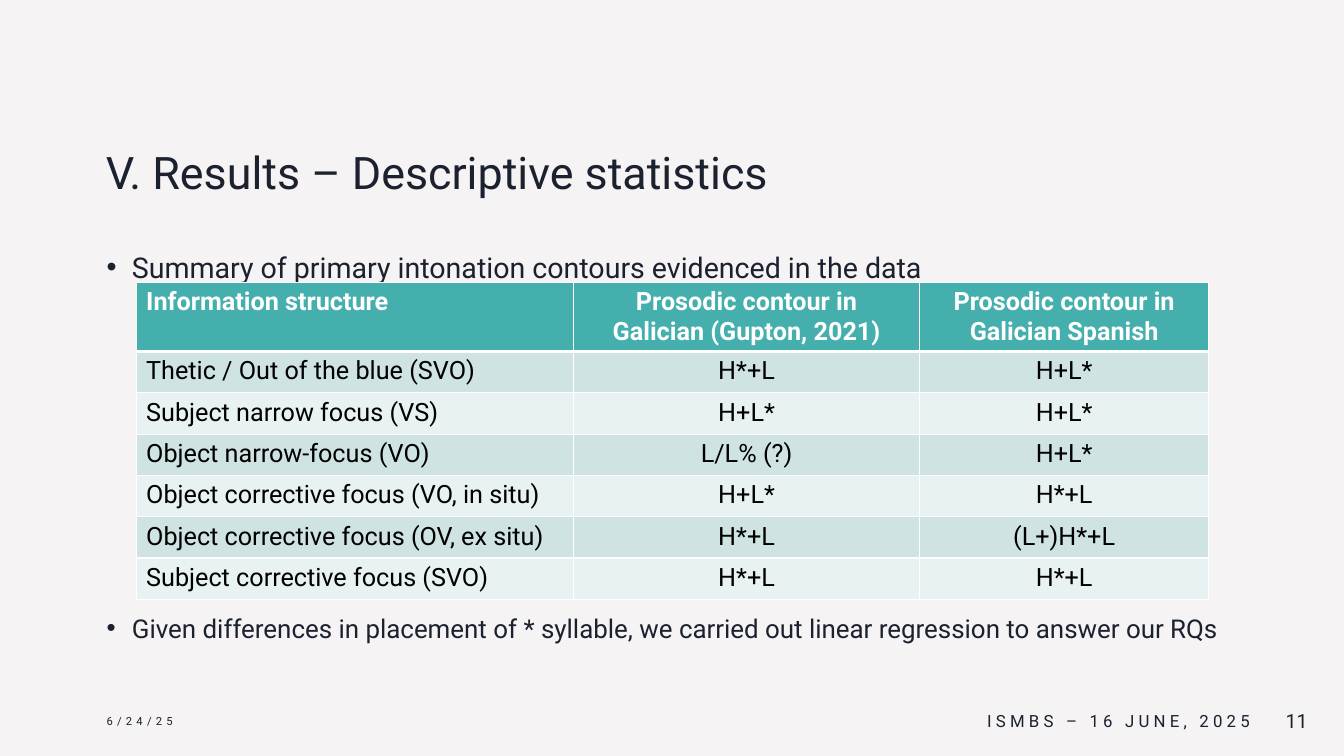
from lxml.etree import SubElement
from pptx import Presentation
from pptx.dml.color import RGBColor
from pptx.enum.text import MSO_ANCHOR, MSO_AUTO_SIZE, PP_ALIGN
from pptx.oxml.ns import qn
from pptx.util import Inches, Pt

INK = "1B212F"
WHITE = "FFFFFF"
BACKGROUND = "F5F3F3"
TEAL = "45AFAE"
BANDS = ("CFE3E3", "E9F2F2")

CONTOURS = [
    ("Information structure", "Prosodic contour in\nGalician (Gupton, 2021)",
     "Prosodic contour in Galician Spanish"),
    ("Thetic / Out of the blue (SVO)", "H*+L", "H+L*"),
    ("Subject narrow focus (VS)", "H+L*", "H+L*"),
    ("Object narrow-focus (VO)", "L/L% (?)", "H+L*"),
    ("Object corrective focus (VO, in situ)", "H+L*", "H*+L"),
    ("Object corrective focus (OV, ex situ)", "H*+L", "(L+)H*+L"),
    ("Subject corrective focus (SVO)", "H*+L", "H*+L"),
]


def color(hex_string):
    return RGBColor.from_string(hex_string)


def write(paragraph, text, size=18, ink=INK, bold=False, align=PP_ALIGN.LEFT, tracking=0):
    paragraph.alignment = align
    run = paragraph.add_run()
    run.text = text
    run.font.name = "Roboto"
    run.font.size = Pt(size)
    run.font.bold = bold
    run.font.color.rgb = color(ink)
    if tracking:
        run.font._element.set("spc", str(tracking * 100))


class ResultsSlide:
    def __init__(self, presentation):
        self.slide = presentation.slides.add_slide(presentation.slide_layouts[5])
        fill = self.slide.background.fill
        fill.solid()
        fill.fore_color.rgb = color(BACKGROUND)

    def frame(self, holder, anchor):
        frame = holder.text_frame
        frame.word_wrap = True
        frame.auto_size = MSO_AUTO_SIZE.NONE
        frame.vertical_anchor = anchor
        return frame

    def title(self, text, left, top, width, height):
        heading = self.slide.shapes.title
        heading.left, heading.top = Inches(left), Inches(top)
        heading.width, heading.height = Inches(width), Inches(height)
        frame = self.frame(heading, MSO_ANCHOR.BOTTOM)
        write(frame.paragraphs[0], text, size=32)

    def text(self, left, top, width, height, anchor=MSO_ANCHOR.MIDDLE):
        box = self.slide.shapes.add_textbox(
            Inches(left), Inches(top), Inches(width), Inches(height))
        return self.frame(box, anchor)

    def label(self, text, left, width, **style):
        write(self.text(left, 6.95, width, 0.4).paragraphs[0], text, **style)

    def bullets(self, items, left, top, width, height):
        frame = self.text(left, top, width, height, MSO_ANCHOR.TOP)
        for index, (text, size, gap) in enumerate(items):
            paragraph = frame.add_paragraph() if index else frame.paragraphs[0]
            paragraph.line_spacing = 1.2
            paragraph.space_before = Pt(gap)
            properties = paragraph._p.get_or_add_pPr()
            properties.set("marL", str(Inches(0.25)))
            properties.set("indent", str(Inches(-0.25)))
            SubElement(properties, qn("a:buFont"), typeface="Arial")
            SubElement(properties, qn("a:buChar"), char="•")
            write(paragraph, text, size=size)

    def table(self, rows, left, top, widths, heights):
        grid = self.slide.shapes.add_table(
            len(rows), len(widths), Inches(left), Inches(top),
            Inches(sum(widths)), Inches(sum(heights))).table
        for column, width in zip(grid.columns, widths):
            column.width = Inches(width)
        for index, (row, height, texts) in enumerate(zip(grid.rows, heights, rows)):
            row.height = Inches(height)
            for position, (cell, text) in enumerate(zip(row.cells, texts)):
                self.cell(cell, text, index, position)

    def cell(self, cell, text, row, column):
        header = row == 0
        for index, line in enumerate(text.split("\n")):
            frame = cell.text_frame
            paragraph = frame.add_paragraph() if index else frame.paragraphs[0]
            write(paragraph, line, ink=WHITE if header else "000000", bold=header,
                  align=PP_ALIGN.CENTER if column else PP_ALIGN.LEFT)
        properties = cell._tc.get_or_add_tcPr()
        weights = {"lnL": 1, "lnR": 1, "lnT": 3 if row == 1 else 1, "lnB": 3 if header else 1}
        for side, weight in weights.items():
            border = SubElement(properties, qn(f"a:{side}"), w=str(Pt(weight)))
            SubElement(SubElement(border, qn("a:solidFill")), qn("a:srgbClr"), val=WHITE)
        cell.fill.solid()
        cell.fill.fore_color.rgb = color(TEAL if header else BANDS[(row - 1) % 2])


def main():
    presentation = Presentation()
    presentation.slide_width, presentation.slide_height = Inches(13.33), Inches(7.5)
    results = ResultsSlide(presentation)
    results.title("V. Results – Descriptive statistics", 0.95, 0.64, 11.43, 1.38)
    results.bullets([
        ("Summary of primary intonation contours evidenced in the data", 20.4, 10),
        ("Given differences in placement of * syllable, we carried out linear "
         "regression to answer our RQs", 18.5, 230),
    ], 0.96, 2.36, 11.42, 4.27)
    results.label("6/24/25", 0.96, 3, size=8, tracking=3)
    results.label("ISMBS – 16 JUNE, 2025", 7.8, 4.7, size=12, tracking=3, align=PP_ALIGN.RIGHT)
    results.label("11", 12.5, 0.57, size=14, align=PP_ALIGN.RIGHT)
    results.table(CONTOURS, 1.35, 2.8, [4.34, 3.43, 2.87], [0.68] + [0.41] * 6)
    presentation.save("out.pptx")


if __name__ == "__main__":
    main()
